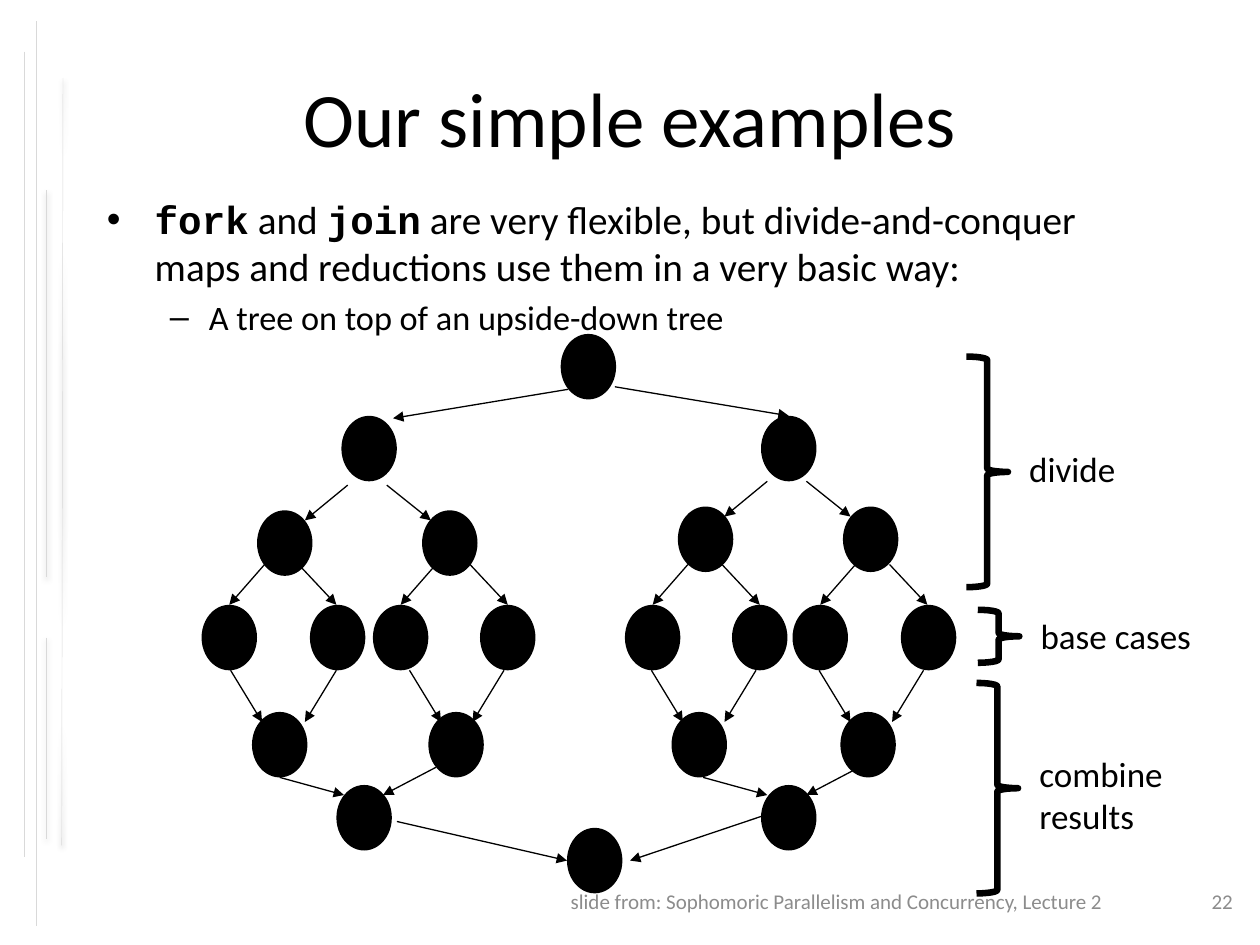
from lxml import etree
from pptx import Presentation
from pptx.dml.color import RGBColor
from pptx.enum.shapes import MSO_CONNECTOR, MSO_SHAPE
from pptx.enum.text import MSO_ANCHOR, MSO_AUTO_SIZE, PP_ALIGN
from pptx.oxml.ns import qn
from pptx.util import Emu, Pt

STRAIGHT = MSO_CONNECTOR.STRAIGHT
ELLIPSE, BRACE = MSO_SHAPE.OVAL, MSO_SHAPE.LEFT_BRACE
TOP, MIDDLE = MSO_ANCHOR.TOP, MSO_ANCHOR.MIDDLE
LEFT, CENTER, RIGHT = PP_ALIGN.LEFT, PP_ALIGN.CENTER, PP_ALIGN.RIGHT
NO_FIT, GROW = MSO_AUTO_SIZE.NONE, MSO_AUTO_SIZE.SHAPE_TO_FIT_TEXT
PX = 9144
NODE_W, NODE_H = 44, 52
BLACK, GRAY, PALE = "000000", "8C8C8C", "D9D9D9"
BODY = {"name": "Calibri", "bold": False}
CODE = {"name": "Courier New", "bold": True}


def px(*values):
    """Turn px lengths into EMU."""
    return [Emu(v * PX) for v in values]


def rgb(color):
    """Turn a hex string into a colour."""
    return RGBColor.from_string(color)


def set_attrs(obj, **values):
    """Set each named attribute on an object."""
    for name, value in values.items():
        setattr(obj, name, value)


def add_run(p, text, size, color=BLACK, **fmt):
    """Append a formatted run to a paragraph."""
    r = p.add_run()
    r.text = text
    set_attrs(r.font, size=Pt(size), **{**BODY, **fmt})
    r.font.color.rgb = rgb(color)


def add_text(s, box, text, size, color=BLACK, align=LEFT, anchor=TOP, wrap=True, fit=NO_FIT):
    """Add a text box holding one paragraph."""
    tf = s.shapes.add_textbox(*px(*box)).text_frame
    set_attrs(tf, word_wrap=wrap, auto_size=fit, vertical_anchor=anchor)
    p = tf.paragraphs[0]
    p.alignment = align
    add_run(p, text, size, color)


def add_line(s, x1, y1, x2, y2, color=BLACK, width=0.75):
    """Add a straight line without effects."""
    c = s.shapes.add_connector(STRAIGHT, *px(x1, y1, x2, y2))
    c.line.color.rgb = rgb(color)
    c.line.width = Pt(width)
    return c, etree.SubElement(c._element.spPr, qn("a:effectLst"))


def add_arrow(s, *ends):
    """Add a line with a triangle at its far end."""
    c, _ = add_line(s, *ends)
    etree.SubElement(c.line._get_or_add_ln(), qn("a:tailEnd"), type="triangle")


def add_node(s, x, y):
    """Add one tree node."""
    sp = s.shapes.add_shape(ELLIPSE, *px(x, y, NODE_W, NODE_H))
    sp.shadow.inherit = False
    sp.fill.solid()
    sp.fill.fore_color.rgb = rgb(BLACK)
    sp.line.fill.background()


def add_rails(s):
    """Draw the shadowed rules along the left edge."""
    rails = [(50, 62, 49, 671), (19, 41, 19, 680), (37, 151, 37, 458),
             (29, 17, 29, 735), (37, 506, 37, 666)]
    for rail in rails:
        _, effects = add_line(s, *rail, PALE, 0.25)
        shadow = etree.SubElement(effects, qn("a:outerShdw"), blurRad=str(Pt(3.1)),
                                  dist=str(Pt(1.6)), dir="5400000", rotWithShape="0")
        color = etree.SubElement(shadow, qn("a:srgbClr"), val=BLACK)
        etree.SubElement(color, qn("a:alpha"), val="38000")


def add_title(s, box):
    """Place and fill the title placeholder."""
    sp = s.shapes.title
    set_attrs(sp, **dict(zip(("left", "top", "width", "height"), px(*box))))
    set_attrs(sp.text_frame, vertical_anchor=MIDDLE, word_wrap=True, auto_size=NO_FIT)
    p = sp.text_frame.paragraphs[0]
    p.alignment = CENTER
    add_run(p, "Our simple examples", 44)


def add_body(s, box):
    """Add the two-level bulleted text."""
    tf = s.shapes.add_textbox(*px(*box)).text_frame
    tf.word_wrap = True
    rest = " are very flexible, but divide-and-conquer maps and reductions use them in a very basic way:"
    items = [
        (0, "•", 38, 38, 22.4, [("fork", CODE), (" and ", BODY), ("join", CODE), (rest, BODY)]),
        (1, "–", 81, 31, 19.6, [("A tree on top of an upside-down tree", BODY)]),
    ]
    for level, bullet, margin, hang, size, runs in items:
        p = tf.add_paragraph() if level else tf.paragraphs[0]
        set_attrs(p, level=level, space_before=Pt(round(size * 0.2, 1)))
        pPr = p._p.get_or_add_pPr()
        pPr.set("marL", str(margin * PX))
        pPr.set("indent", str(-hang * PX))
        etree.SubElement(pPr, qn("a:buFont"), typeface="Arial")
        etree.SubElement(pPr, qn("a:buChar"), char=bullet)
        for text, fmt in runs:
            add_run(p, text, size, **fmt)


def add_half_tree(s, x, y, root, forks, fork_y, leaves, joins, join_starts, last):
    """Draw one half of the fork and join tree from its left edge and top."""
    rows = [(0, [root]), (fork_y, forks), (150, leaves), (235, joins), (293, [last])]
    for dy, lefts in rows:
        for dx in lefts:
            add_node(s, x + dx, y + dy)
    for start, end in ((5, -29), (36, 71)):
        add_arrow(s, x + root + start, y + fork_y - 20, x + root + end, y + fork_y + 8)
    for leaf in leaves[::2]:
        center = x + leaf + NODE_W // 2
        for start, end in ((28, 0), (55, 85)):
            add_arrow(s, center + start, y + 118, center + end, y + 150)
    for first, second in join_starts:
        add_arrow(s, x + first, y + 202, x + first + 25, y + 243)
        add_arrow(s, x + second, y + 202, x + second - 25, y + 243)
    add_arrow(s, x + 62, y + 287, x + 113, y + 301)
    add_arrow(s, x + 186, y + 279, x + 144, y + 301)


def add_tree(s, x, y):
    """Draw the whole tree from its left edge and top."""
    add_node(s, x + 285, y)
    add_node(s, x + 290, y + 392)
    add_half_tree(s, x, y + 65, 111, (44, 175), 75, (0, 86, 136, 221),
                  (40, 180), ((23, 107), (165, 240)), 107)
    add_half_tree(s, x + 336, y + 65, 108, (42, 173), 72, (0, 85, 133, 219),
                  (37, 171), ((21, 104), (154, 237)), 108)
    for ends in ((291, 44, 152, 67), (328, 42, 466, 65),
                 (155, 387, 290, 418), (444, 383, 340, 418)):
        add_arrow(s, *(v + d for v, d in zip(ends, (x, y, x, y))))


def add_phase(s, x, y, height, text, label_y, label_w, label_h, wrap=False):
    """Add a brace and the label to its right."""
    sp = s.shapes.add_shape(BRACE, *px(x, y, 33, height))
    sp.shadow.inherit = False
    sp.rotation = 180
    sp.fill.background()
    sp.line.color.rgb = rgb(BLACK)
    sp.line.width = Pt(3.75)
    add_text(s, (x + 40, label_y, label_w, label_h), text, 20, wrap=wrap, fit=GROW)


def main():
    """Build and save the slide."""
    prs = Presentation()
    prs.slide_width, prs.slide_height = px(1000, 750)
    s = prs.slides.add_slide(prs.slide_layouts[5])
    add_rails(s)
    add_title(s, (50, 30, 900, 125))
    add_body(s, (75, 150, 850, 117))
    add_tree(s, 160, 265)
    add_phase(s, 776, 484, 42, "base cases", 483, 162, 44)
    add_phase(s, 767, 283, 183, "divide", 350, 101, 44)
    add_phase(s, 775, 542, 167, "combine results", 592, 135, 77, True)
    add_text(s, (942, 695, 56, 40), "22", 12, GRAY, CENTER, MIDDLE)
    add_text(s, (312, 695, 573, 40), "slide from: Sophomoric Parallelism and Concurrency, Lecture 2",
             12, GRAY, RIGHT, MIDDLE)
    prs.save("out.pptx")


if __name__ == "__main__":
    main()
